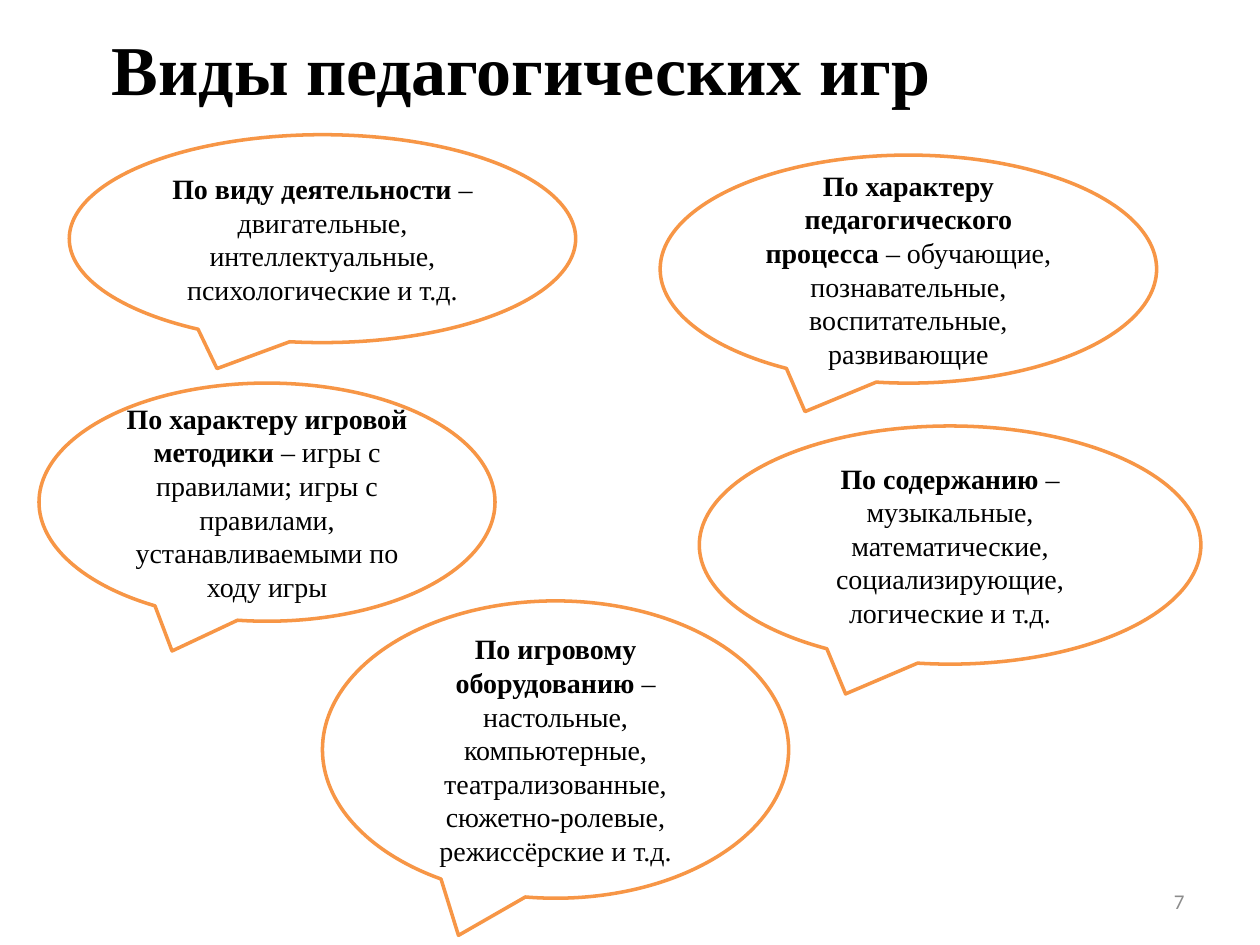
from pptx import Presentation
from pptx.dml.color import RGBColor
from pptx.enum.shapes import MSO_SHAPE
from pptx.enum.text import MSO_ANCHOR, PP_ALIGN
from pptx.util import Pt

CALLOUT = MSO_SHAPE.OVAL_CALLOUT
BOTTOM, MIDDLE = MSO_ANCHOR.BOTTOM, MSO_ANCHOR.MIDDLE
LEFT, CENTER, RIGHT = PP_ALIGN.LEFT, PP_ALIGN.CENTER, PP_ALIGN.RIGHT

SERIF, SANS = "Times New Roman", "Calibri"
COLORS = {"paper": "FFFFFF", "ink": "000000", "outline": "F79646", "number": "8C8C8C"}

GAME_TYPES = [
    ((39.6, 77, 289.4, 118.8), "По виду деятельности ",
     "– двигательные, интеллектуальные,", "психологические и т.д."),
    ((377.3, 88.6, 283.7, 130.3), "По характеру педагогического процесса ",
     "– обучающие,", "познавательные, воспитательные, развивающие"),
    ((22.3, 218.9, 260.6, 136.1), "По характеру игровой методики ",
     "– игры с правилами; игры с", "правилами, устанавливаемыми по ходу игры"),
    ((399.6, 243.4, 286.6, 136.1), "По содержанию ",
     "– музыкальные, математические,", "социализирующие, логические и т.д."),
    ((184.3, 343.4, 266.4, 169.9), "По игровому оборудованию ",
     "– настольные, компьютерные,",
     "театрализованные, сюжетно-ролевые, режиссёрские и т.д."),
]


def color(name):
    """Return the named palette colour."""
    return RGBColor.from_string(COLORS[name])


def style(paragraph, font_name, size, color_name, alignment):
    """Set the font and alignment of a paragraph."""
    paragraph.alignment = alignment
    font = paragraph.font
    font.name, font.size = font_name, Pt(size)
    font.color.rgb = color(color_name)


def add_label(slide, box, text, anchor, font_name, size, color_name, alignment, bold=False):
    """Add a one-line text box."""
    frame = slide.shapes.add_textbox(*map(Pt, box)).text_frame
    frame.word_wrap = True
    frame.vertical_anchor = anchor
    paragraph = frame.paragraphs[0]
    paragraph.text = text
    style(paragraph, font_name, size, color_name, alignment)
    paragraph.font.bold = bold


def add_callout(slide, box, heading, opening, continuation):
    """Add an oval callout with a bold heading and its examples."""
    shape = slide.shapes.add_shape(CALLOUT, *map(Pt, box))
    shape.shadow.inherit = False
    shape.fill.solid()
    shape.fill.fore_color.rgb = color("paper")
    shape.line.color.rgb = color("outline")
    shape.line.width = Pt(2)
    frame = shape.text_frame
    frame.word_wrap = True
    frame.vertical_anchor = MIDDLE
    first, second = frame.paragraphs[0], frame.add_paragraph()
    heading_run = first.add_run()
    heading_run.text = heading
    heading_run.font.bold = True
    first.add_run().text = opening
    second.text = continuation
    for paragraph in (first, second):
        style(paragraph, SERIF, 16, "ink", CENTER)


def main():
    """Build and save the slide."""
    presentation = Presentation()
    presentation.slide_width, presentation.slide_height = Pt(720), Pt(540)
    slide = presentation.slides.add_slide(presentation.slide_layouts[6])
    add_label(slide, (56.9, 15.1, 612, 51.1), "Виды педагогических игр",
              BOTTOM, SERIF, 40, "ink", LEFT, bold=True)
    add_label(slide, (516.2, 500.4, 167.8, 28.8), "7",
              MIDDLE, SANS, 12, "number", RIGHT)
    for game_type in GAME_TYPES:
        add_callout(slide, *game_type)
    presentation.save("out.pptx")


if __name__ == "__main__":
    main()
